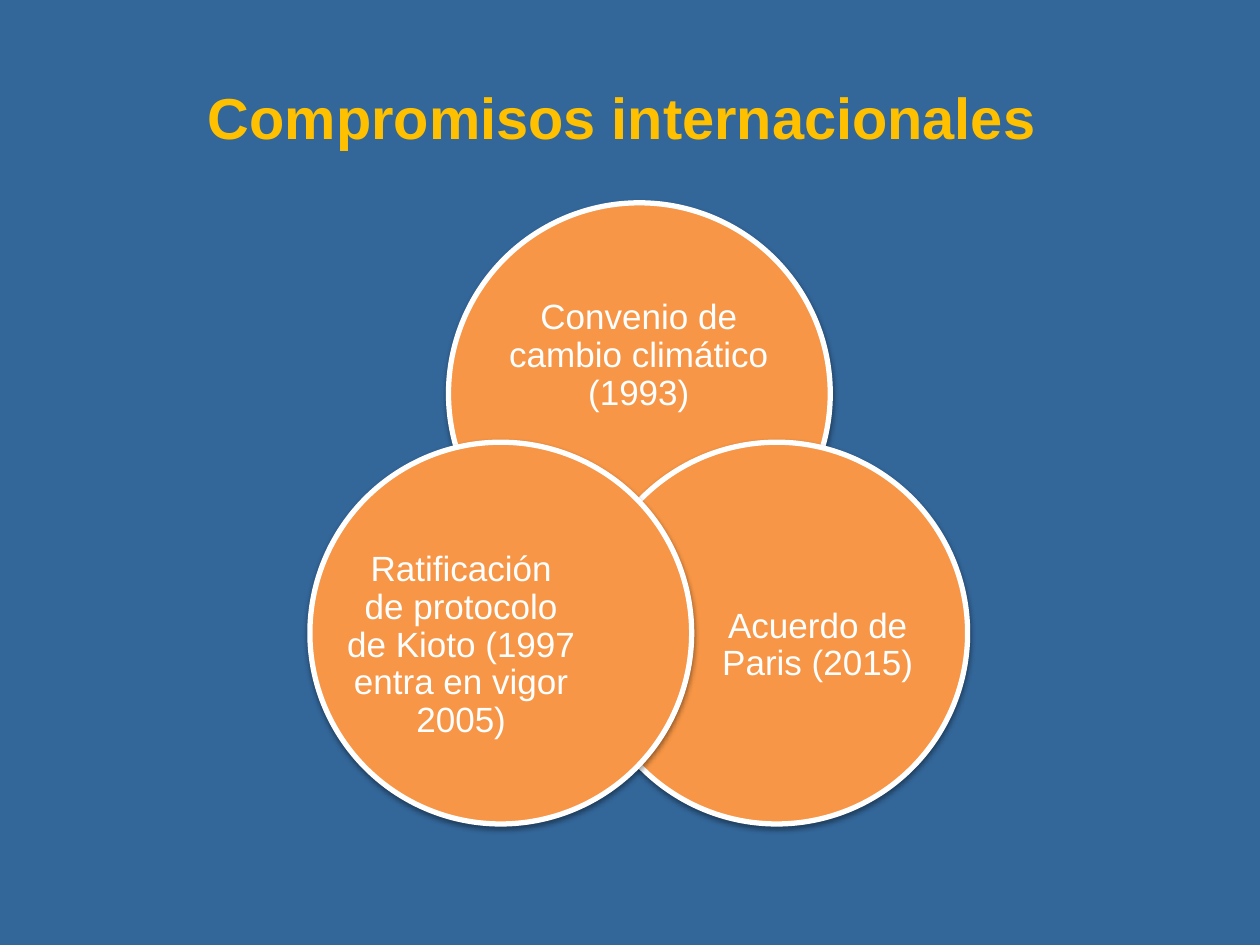
from dataclasses import dataclass

import pptx
import pptx.dml.color
import pptx.enum.shapes
import pptx.enum.text
import pptx.oxml
import pptx.oxml.ns
import pptx.shapes.autoshape
import pptx.shapes.shapetree
import pptx.util

Inches = pptx.util.Inches
Pt = pptx.util.Pt
RGBColor = pptx.dml.color.RGBColor

BLUE = RGBColor(0x33, 0x66, 0x99)
GOLD = RGBColor(0xFF, 0xC0, 0x00)
ORANGE = RGBColor(0xF7, 0x96, 0x46)
WHITE = RGBColor(0xFF, 0xFF, 0xFF)
FONT = "Arial"
DIAMETER = 3.03

SHADOW_XML = (
    f'<a:outerShdw {pptx.oxml.ns.nsdecls("a")} blurRad="{Pt(3.1)}" dist="{Pt(1.6)}" '
    'dir="5400000" rotWithShape="0"><a:srgbClr val="000000">'
    '<a:alpha val="38000"/></a:srgbClr></a:outerShdw>'
)


@dataclass(frozen=True)
class Commitment:
    """A circle's corner and its label's box (left, top, width, height), in inches."""
    label: str
    left: float
    top: float
    label_box: tuple[float, float, float, float]


COMMITMENTS = [
    Commitment("Convenio de cambio climático (1993)", 3.56, 1.61, (3.96, 2.14, 2.22, 1.37)),
    Commitment("Acuerdo de Paris (2015)", 4.65, 3.51, (5.58, 4.29, 1.82, 1.67)),
    Commitment("Ratificación de protocolo de Kioto (1997 entra en vigor 2005)",
               2.46, 3.51, (2.75, 4.29, 1.82, 1.67)),
]


def add_soft_shadow(circle: pptx.shapes.autoshape.Shape) -> None:
    circle.shadow.inherit = False
    effects = circle._element.spPr.find(pptx.oxml.ns.qn("a:effectLst"))
    effects.append(pptx.oxml.parse_xml(SHADOW_XML))


def add_commitment(shapes: pptx.shapes.shapetree.GroupShapes, commitment: Commitment) -> None:
    circle = shapes.add_shape(
        pptx.enum.shapes.MSO_SHAPE.OVAL, Inches(commitment.left), Inches(commitment.top),
        Inches(DIAMETER), Inches(DIAMETER))
    circle.fill.solid()
    circle.fill.fore_color.rgb = ORANGE
    circle.line.color.rgb = WHITE
    circle.line.width = Pt(3)
    add_soft_shadow(circle)

    label = shapes.add_textbox(*map(Inches, commitment.label_box)).text_frame
    label.word_wrap = True
    label.vertical_anchor = pptx.enum.text.MSO_ANCHOR.MIDDLE
    label.margin_left = label.margin_right = label.margin_top = label.margin_bottom = 0
    label.text = commitment.label
    paragraph = label.paragraphs[0]
    paragraph.alignment = pptx.enum.text.PP_ALIGN.CENTER
    paragraph.line_spacing = 0.9
    paragraph.space_after = Pt(7)
    font = paragraph.runs[0].font
    font.name, font.size, font.color.rgb = FONT, Pt(20), WHITE


def main() -> None:
    presentation = pptx.Presentation()
    presentation.slide_width = Inches(10)
    presentation.slide_height = Inches(7.5)
    slide = presentation.slides.add_slide(presentation.slide_layouts.get_by_name("Title Only"))
    slide.background.fill.solid()
    slide.background.fill.fore_color.rgb = BLUE

    title = slide.shapes.title
    title.left, title.top = Inches(0.5), Inches(0.3)
    title.width, title.height = Inches(9), Inches(1.25)
    title.text_frame.text = "Compromisos internacionales "
    title.text_frame.vertical_anchor = pptx.enum.text.MSO_ANCHOR.MIDDLE
    heading = title.text_frame.paragraphs[0]
    heading.alignment = pptx.enum.text.PP_ALIGN.CENTER
    font = heading.runs[0].font
    font.name, font.size, font.bold, font.color.rgb = FONT, Pt(33), True, GOLD

    venn = slide.shapes.add_group_shape()
    for commitment in COMMITMENTS:
        add_commitment(venn.shapes, commitment)

    presentation.save("out.pptx")


if __name__ == "__main__":
    main()
